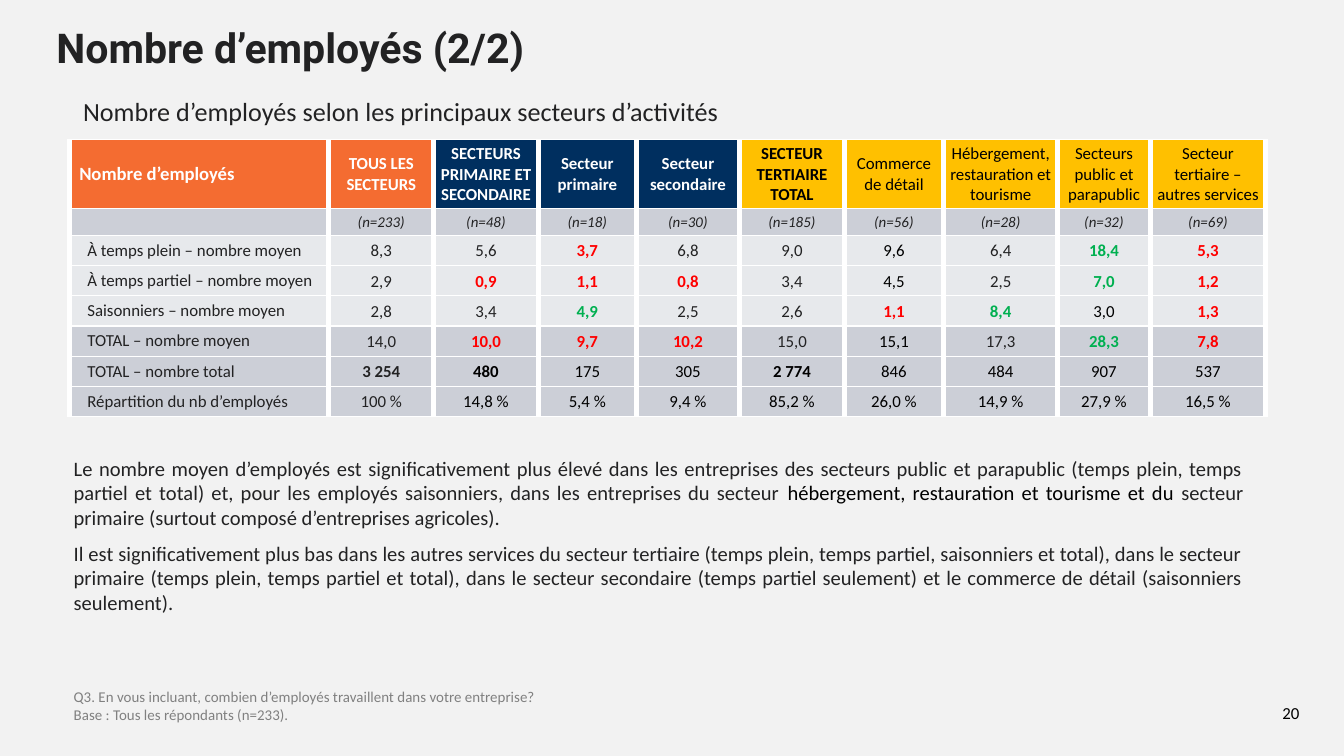
from dataclasses import dataclass
from functools import partial
from typing import NamedTuple

import lxml.etree
import pptx
import pptx.dml.color
import pptx.enum.text
import pptx.oxml.ns
import pptx.util

Inches = pptx.util.Inches
Align = pptx.enum.text.PP_ALIGN
Anchor = pptx.enum.text.MSO_ANCHOR
AutoSize = pptx.enum.text.MSO_AUTO_SIZE


@dataclass(frozen=True)
class Theme:
    body_font: str = "Calibri"
    title_font: str = "Roboto"
    background: str = "F2F2F2"
    ink: str = "222223"
    black: str = "000000"
    white: str = "FFFFFF"
    grey: str = "808080"
    low: str = "FF0000"
    high: str = "00B050"
    orange: str = "F46C31"
    navy: str = "002F5F"
    yellow: str = "FFC000"
    light_row: str = "E7E9EC"
    dark_row: str = "CCCFD7"
    title_size: float = 22
    subtitle_size: float = 14
    body_size: float = 11
    corner_size: float = 10
    table_size: float = 9
    small_size: float = 8


THEME = Theme()


class Span(NamedTuple):
    text: str
    size: float = THEME.table_size
    color: str = THEME.ink
    bold: bool = False
    italic: bool = False
    font: str = THEME.body_font


class Box(NamedTuple):
    left: float
    top: float
    width: float
    height: float

    def lengths(self) -> list[int]:
        return [Inches(value) for value in self]


class Sector(NamedTuple):
    name: str
    base: int
    width: float
    fill: str
    color: str
    bold: bool = True


class Row(NamedTuple):
    label: str
    values: list[str | Span]
    fill: str = THEME.light_row
    color: str = THEME.ink


low = partial(Span, color=THEME.low, bold=True)
high = partial(Span, color=THEME.high, bold=True)
black = partial(Span, color=THEME.black)
strong = partial(Span, color=THEME.black, bold=True)
body = partial(Span, size=THEME.body_size)
note = partial(Span, size=THEME.small_size, color=THEME.grey)

TABLE_BOX = Box(0.52, 1.04, 8.9, 2.05)
LABEL_WIDTH, HEADER_HEIGHT, BASE_HEIGHT = 1.93, 0.5, 0.2
LABEL_MARGINS = (0.13, 0, 0.07, 0)
HEADER_MARGINS = (0.03, 0.03, 0.03, 0.03)
VALUE_MARGINS = (0.01, 0.01, 0.01, 0)

SECTORS = [
    Sector("TOUS LES SECTEURS", 233, 0.78, THEME.orange, THEME.white),
    Sector("SECTEURS PRIMAIRE ET SECONDAIRE", 48, 0.78, THEME.navy, THEME.white),
    Sector("Secteur primaire", 18, 0.73, THEME.navy, THEME.white),
    Sector("Secteur secondaire", 30, 0.77, THEME.navy, THEME.white),
    Sector("SECTEUR TERTIAIRE TOTAL", 185, 0.78, THEME.yellow, THEME.black),
    Sector("Commerce de détail", 56, 0.74, THEME.yellow, THEME.black, False),
    Sector("Hébergement, restauration et tourisme", 28, 0.85, THEME.yellow, THEME.black, False),
    Sector("Secteurs public et parapublic", 32, 0.69, THEME.yellow, THEME.black, False),
    Sector("Secteur tertiaire – autres services", 69, 0.86, THEME.yellow, THEME.black, False),
]
ROWS = [
    Row("À temps plein – nombre moyen",
        ["8,3", "5,6", low("3,7"), "6,8", "9,0", black("9,6"), "6,4", high("18,4"), low("5,3")]),
    Row("À temps partiel – nombre moyen",
        ["2,9", low("0,9"), low("1,1"), low("0,8"), "3,4", black("4,5"), "2,5", high("7,0"), low("1,2")]),
    Row("Saisonniers – nombre moyen",
        ["2,8", "3,4", high("4,9"), "2,5", "2,6", low("1,1"), high("8,4"), black("3,0"), low("1,3")]),
    Row("TOTAL – nombre moyen",
        ["14,0", low("10,0"), low("9,7"), low("10,2"), "15,0", black("15,1"), "17,3", high("28,3"), low("7,8")],
        THEME.dark_row),
    Row("TOTAL – nombre total",
        [Span("3 254", bold=True), strong("480"), "175", "305", strong("2 774"), "846", "484", "907", "537"],
        THEME.dark_row, THEME.black),
    Row("Répartition du nb d’employés",
        [Span("100 %"), "14,8 %", "5,4 %", "9,4 %", "85,2 %", "26,0 %", "14,9 %", "27,9 %", "16,5 %"],
        THEME.dark_row, THEME.black),
]
FINDINGS = [
    [body("Le nombre moyen d’employés est significativement plus élevé dans les entreprises des secteurs public "
          "et parapublic (temps plein, temps partiel et total) et, pour les employés saisonniers, dans les "
          "entreprises du secteur "),
     body("hébergement, restauration et tourisme et du ", color=THEME.black),
     body("secteur primaire (surtout composé d’entreprises agricoles).")],
    [body("Il est significativement plus bas dans les autres services du secteur tertiaire (temps plein, temps "
          "partiel, saisonniers et total), dans le secteur primaire (temps plein, temps partiel et total), dans le "
          "secteur secondaire (temps partiel seulement) et le commerce de détail (saisonniers seulement).")],
]


def rgb(color: str) -> pptx.dml.color.RGBColor:
    return pptx.dml.color.RGBColor.from_string(color)


def add_span(para, span: Span) -> None:
    run = para.add_run()
    run.text = span.text
    font = run.font
    font.name, font.size = span.font, pptx.util.Pt(span.size)
    font.bold, font.italic = span.bold, span.italic
    font.color.rgb = rgb(span.color)


def set_margins(target, margins: tuple) -> None:
    """Set left, top, right and bottom margins of a cell or a text frame."""
    for side, margin in zip(("left", "top", "right", "bottom"), margins):
        setattr(target, f"margin_{side}", Inches(margin))


def add_text(page, box: Box, paragraphs: list[list[Span]], align=Align.LEFT,
             margins=(0.1, 0, 0.1, 0), gap: float = 0, anchor=Anchor.TOP) -> None:
    frame = page.shapes.add_textbox(*box.lengths()).text_frame
    frame.word_wrap = True
    frame.vertical_anchor = anchor
    set_margins(frame, margins)
    for index, spans in enumerate(paragraphs):
        para = frame.add_paragraph() if index else frame.paragraphs[0]
        para.alignment = align
        if index < len(paragraphs) - 1:
            para.space_after = pptx.util.Pt(gap)
        for span in spans:
            add_span(para, span)


def add_title(page, box: Box, span: Span) -> None:
    title = page.shapes.title
    title.left, title.top, title.width, title.height = box.lengths()
    frame = title.text_frame
    frame.auto_size = AutoSize.NONE
    frame.vertical_anchor = Anchor.MIDDLE
    set_margins(frame, (0.07, 0.04, 0.07, 0.04))
    para = frame.paragraphs[0]
    para.alignment = Align.LEFT
    para.line_spacing = 0.9
    add_span(para, span)


def set_borders(cell) -> None:
    """Draw white rules, thick at the sides and thin above and below."""
    properties = cell._tc.get_or_add_tcPr()
    for index, (side, points) in enumerate((("L", 3), ("R", 3), ("T", 0.75), ("B", 0.75))):
        line = lxml.etree.Element(pptx.oxml.ns.qn(f"a:ln{side}"), w=str(pptx.util.Pt(points)))
        fill = lxml.etree.SubElement(line, pptx.oxml.ns.qn("a:solidFill"))
        lxml.etree.SubElement(fill, pptx.oxml.ns.qn("a:srgbClr"), val=THEME.white)
        properties.insert(index, line)


def fill_cell(cell, span: Span, fill: str, margins: tuple, align=Align.CENTER) -> None:
    cell.fill.solid()
    cell.fill.fore_color.rgb = rgb(fill)
    set_borders(cell)
    set_margins(cell, margins)
    cell.vertical_anchor = Anchor.MIDDLE
    para = cell.text_frame.paragraphs[0]
    para.alignment = align
    if span.text:
        add_span(para, span)
    else:  # keeps the empty cell from stretching its row
        lxml.etree.SubElement(para._p, pptx.oxml.ns.qn("a:endParaRPr"), sz=str(span.size * 100))


def add_sector_table(page) -> None:
    table = page.shapes.add_table(len(ROWS) + 2, len(SECTORS) + 1, *TABLE_BOX.lengths()).table
    table.first_row = table.horz_banding = False
    row_height = (TABLE_BOX.height - HEADER_HEIGHT - BASE_HEIGHT) / len(ROWS)
    for row, height in zip(table.rows, [HEADER_HEIGHT, BASE_HEIGHT] + [row_height] * len(ROWS)):
        row.height = Inches(height)
    widths = [LABEL_WIDTH] + [sector.width for sector in SECTORS]
    for column, width in zip(table.columns, widths):
        column.width = Inches(width * TABLE_BOX.width / sum(widths))

    corner = Span("Nombre d’employés", THEME.corner_size, THEME.white, True)
    fill_cell(table.cell(0, 0), corner, THEME.orange, (0.07, 0, 0.07, 0), Align.LEFT)
    fill_cell(table.cell(1, 0), Span("", THEME.small_size), THEME.dark_row, LABEL_MARGINS)
    for column, sector in enumerate(SECTORS, 1):
        name = Span(sector.name, color=sector.color, bold=sector.bold)
        base = Span(f"(n={sector.base})", THEME.small_size, italic=True)
        fill_cell(table.cell(0, column), name, sector.fill, HEADER_MARGINS)
        fill_cell(table.cell(1, column), base, THEME.dark_row, VALUE_MARGINS)
    for index, row in enumerate(ROWS, 2):
        fill_cell(table.cell(index, 0), Span(row.label), row.fill, LABEL_MARGINS, Align.LEFT)
        for column, value in enumerate(row.values, 1):
            span = value if isinstance(value, Span) else Span(value, color=row.color)
            fill_cell(table.cell(index, column), span, row.fill, VALUE_MARGINS)


def main() -> None:
    deck = pptx.Presentation()
    deck.slide_width, deck.slide_height = Inches(10), Inches(10 * 9 / 16)
    page = deck.slides.add_slide(deck.slide_layouts.get_by_name("Title Only"))
    page.background.fill.solid()
    page.background.fill.fore_color.rgb = rgb(THEME.background)

    add_title(page, Box(0.35, 0.19, 9.38, 0.36),
              Span("Nombre d’employés (2/2)", THEME.title_size, bold=True, font=THEME.title_font))
    add_text(page, Box(0.52, 0.71, 8.9, 0.24),
             [[Span("Nombre d’employés selon les principaux secteurs d’activités", THEME.subtitle_size)]],
             Align.JUSTIFY)
    add_sector_table(page)
    add_text(page, Box(0.45, 3.39, 8.9, 1.19), FINDINGS, Align.JUSTIFY, gap=6)
    add_text(page, Box(0.45, 5.07, 5.99, 0.37),
             [[note("Q3. En vous incluant, combien d’employés travaillent dans votre entreprise?")],
              [note("Base : Tous les répondants (n=233).")]], margins=(0.1, 0.05, 0.1, 0.05))
    add_text(page, Box(9.35, 5.13, 0.51, 0.3), [[black("20")]], Align.CENTER,
             margins=(0.1, 0.05, 0.1, 0.05), anchor=Anchor.BOTTOM)
    deck.save("out.pptx")


if __name__ == "__main__":
    main()
